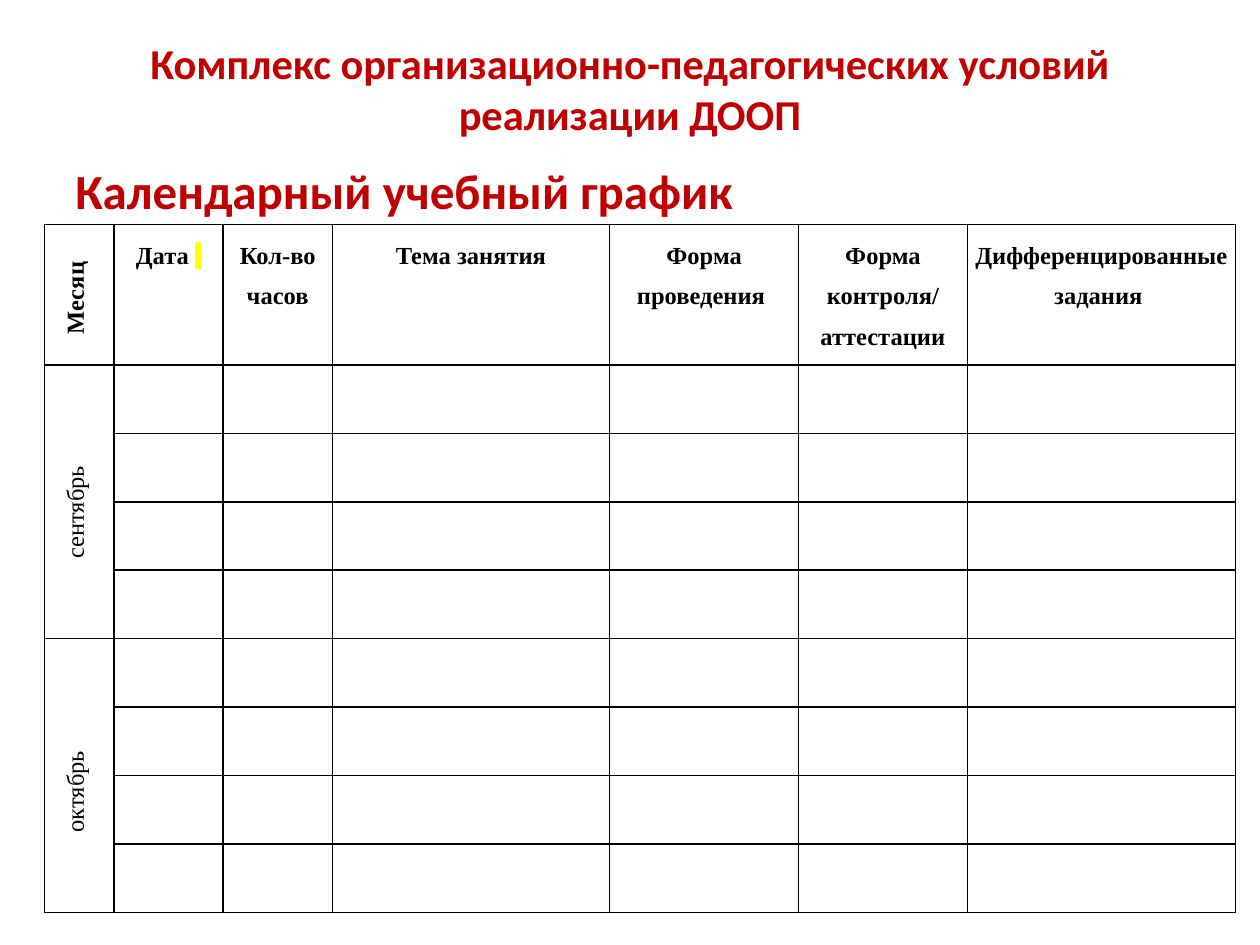
import pptx
import pptx.util
import pptx.dml.color
import pptx.enum.text
import pptx.oxml.ns
import lxml.etree

Cm = pptx.util.Cm
Pt = pptx.util.Pt
Align = pptx.enum.text.PP_ALIGN
Anchor = pptx.enum.text.MSO_ANCHOR
qn = pptx.oxml.ns.qn

RED = pptx.dml.color.RGBColor(0xC0, 0x00, 0x00)
BLACK = pptx.dml.color.RGBColor(0x00, 0x00, 0x00)
YELLOW = pptx.dml.color.RGBColor(0xFF, 0xFF, 0x00)

COLUMN_WIDTHS = [1.4, 2.2, 2.2, 5.59, 3.81, 3.4, 5.41]
HEADER_HEIGHT = 2.76
LESSON_HEIGHT = 1.38
LESSONS_PER_MONTH = 4
MONTHS = ["сентябрь", "октябрь"]
HEADERS = [
    ["Месяц "],
    ["Дата "],
    ["Кол-во часов"],
    ["Тема занятия"],
    ["Форма проведения "],
    ["Форма контроля/", "аттестации"],
    ["Дифференцированные задания "],
]


def style(para, name, size, color, bold):
    para.font.name = name
    para.font.size = Pt(size)
    para.font.color.rgb = color
    para.font.bold = bold


def add_color(parent, tag, color):
    holder = lxml.etree.SubElement(parent, qn(tag))
    lxml.etree.SubElement(holder, qn("a:srgbClr"), val=str(color))


def add_heading(page, box, text, size, align, anchor):
    frame = page.shapes.add_textbox(*(Cm(length) for length in box)).text_frame
    frame.word_wrap = True
    frame.vertical_anchor = anchor
    para = frame.paragraphs[0]
    para.text = text
    para.alignment = align
    style(para, "Calibri", size, RED, True)


def format_cell(cell):
    cell.margin_left = cell.margin_right = Cm(0.16)
    cell.margin_top = cell.margin_bottom = Cm(0.08)
    properties = cell._tc.get_or_add_tcPr()
    for side in ("a:lnL", "a:lnR", "a:lnT", "a:lnB"):
        line = lxml.etree.SubElement(properties, qn(side), w=str(Pt(1)))
        add_color(line, "a:solidFill", BLACK)
    cell.fill.background()


def write_cell(cell, lines, bold, align):
    cell.text = "\n".join(lines)
    for para in cell.text_frame.paragraphs:
        para.alignment = align
        para.line_spacing = 1.5
        style(para, "Times New Roman", 14, BLACK, bold)


def turn_cell(cell):
    cell._tc.get_or_add_tcPr().set("vert", "vert270")


def add_schedule(page, left, top):
    heights = [HEADER_HEIGHT] + [LESSON_HEIGHT] * LESSONS_PER_MONTH * len(MONTHS)
    table = page.shapes.add_table(
        len(heights), len(COLUMN_WIDTHS), Cm(left), Cm(top),
        Cm(sum(COLUMN_WIDTHS)), Cm(sum(heights))).table
    table.first_row = False
    table.horz_banding = False
    for column, width in zip(table.columns, COLUMN_WIDTHS):
        column.width = Cm(width)
    for row, height in zip(table.rows, heights):
        row.height = Cm(height)
    for cell in table.iter_cells():
        format_cell(cell)

    for index, lines in enumerate(HEADERS):
        write_cell(table.cell(0, index), lines, True, Align.CENTER)
    turn_cell(table.cell(0, 0))
    mark = table.cell(0, 1).text_frame.paragraphs[0].add_run()
    mark.text = " "
    add_color(mark.font._element, "a:highlight", YELLOW)

    for index, month in enumerate(MONTHS):
        first = 1 + index * LESSONS_PER_MONTH
        cell = table.cell(first, 0)
        cell.merge(table.cell(first + LESSONS_PER_MONTH - 1, 0))
        write_cell(cell, [month], False, Align.JUSTIFY)
        turn_cell(cell)
        indents = cell.text_frame.paragraphs[0]._p.get_or_add_pPr()
        indents.set("marL", str(Cm(0.2)))
        indents.set("indent", str(Cm(1.25)))


def main():
    deck = pptx.Presentation()
    deck.slide_width = Cm(25.4)
    deck.slide_height = Cm(19.05)
    page = deck.slides.add_slide(deck.slide_layouts[6])
    add_heading(page, (1.27, 0.8, 22.86, 1.96),
                "Комплекс организационно-педагогических условий реализации ДООП",
                24.3, Align.CENTER, Anchor.MIDDLE)
    add_heading(page, (1.27, 3.12, 22.86, 13.89),
                "Календарный учебный график", 28, Align.LEFT, Anchor.TOP)
    add_schedule(page, 0.9, 4.53)
    deck.save("out.pptx")


if __name__ == "__main__":
    main()
